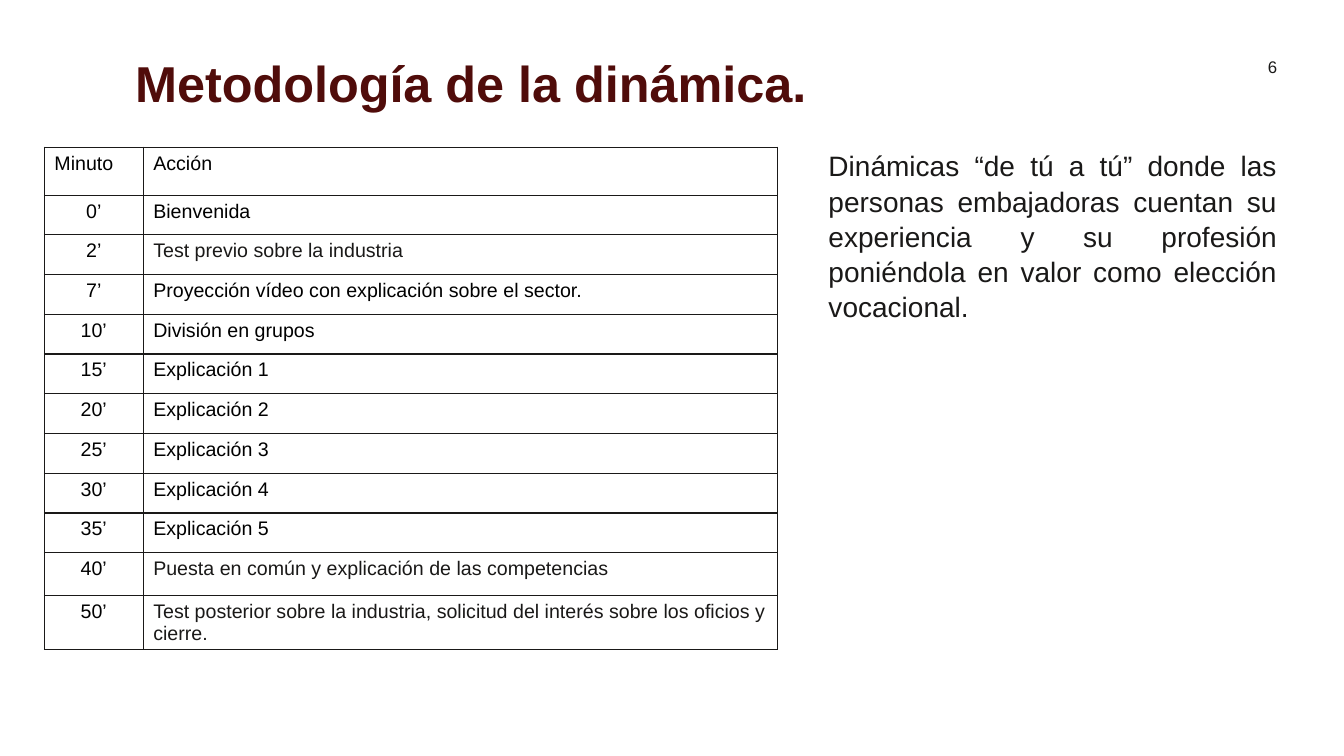
"""Build the slide with the timetable of the ambassador session."""
from lxml import etree
from pptx import Presentation
from pptx.dml.color import RGBColor
from pptx.enum.text import MSO_ANCHOR, MSO_AUTO_SIZE, PP_ALIGN
from pptx.oxml.ns import qn
from pptx.util import Pt

LEFT, CENTER, JUSTIFY = PP_ALIGN.LEFT, PP_ALIGN.CENTER, PP_ALIGN.JUSTIFY
TOP, MIDDLE = MSO_ANCHOR.TOP, MSO_ANCHOR.MIDDLE
NO_AUTOFIT = MSO_AUTO_SIZE.NONE

MAROON = RGBColor(0x50, 0x0C, 0x0A)
INK = RGBColor(0x1A, 0x19, 0x18)
BLACK = RGBColor(0, 0, 0)
FONT_NAME = "Arial"

TITLE = "Metodología de la dinámica."
PAGE_NUMBER = "6"
SUMMARY = (
    "Dinámicas “de tú a tú” donde las personas embajadoras cuentan su "
    "experiencia y su profesión poniéndola en valor como elección vocacional."
)
HEADINGS = ("Minuto", "Acción")
AGENDA = [
    ("0’", "Bienvenida", BLACK),
    ("2’", "Test previo sobre la industria", INK),
    ("7’", "Proyección vídeo con explicación sobre el sector.", BLACK),
    ("10’", "División en grupos", BLACK),
    ("15’", "Explicación 1", BLACK),
    ("20’", "Explicación 2", BLACK),
    ("25’", "Explicación 3", BLACK),
    ("30’", "Explicación 4", BLACK),
    ("35’", "Explicación 5", BLACK),
    ("40’", "Puesta en común y explicación de las competencias", INK),
    ("50’", "Test posterior sobre la industria, solicitud del interés sobre "
            "los oficios y cierre.", INK),
]

SLIDE_SIZE = (960, 540)
TITLE_BOX = (96.5, 38.2, 765.4, 46.8)
NUMBER_BOX = (897.8, 39.6, 22.3, 15.8)
SUMMARY_BOX = (591.8, 105.1, 320.4, 121)
TABLE_LEFT, TABLE_TOP = 31.7, 105.1
COLUMN_WIDTHS = (70.6, 452.9)
ROW_HEIGHTS = [34.3] + [28.4] * 9 + [30.6, 38.4]
BORDER_WIDTH = 1


def write(frame, text, size, color, align=LEFT, bold=False, spacing=1.0):
    """Put one formatted paragraph into a text frame."""
    paragraph = frame.paragraphs[0]
    paragraph.alignment = align
    paragraph.line_spacing = spacing
    paragraph.space_before = Pt(0)
    run = paragraph.add_run()
    run.text = text
    run.font.name = FONT_NAME
    run.font.size = Pt(size)
    run.font.bold = bold
    run.font.color.rgb = color
    return paragraph


def place(shape, box, margins, anchor=TOP, wrap=True):
    """Move a shape and set up its text frame."""
    shape.left, shape.top, shape.width, shape.height = map(Pt, box)
    frame = shape.text_frame
    frame.auto_size = NO_AUTOFIT
    frame.word_wrap = wrap
    frame.vertical_anchor = anchor
    frame.margin_left = frame.margin_right = Pt(margins[0])
    frame.margin_top = frame.margin_bottom = Pt(margins[1])
    return frame


def outline_cell(cell):
    """Give a cell four thin borders and no fill."""
    properties = cell._tc.get_or_add_tcPr()
    for side in ("a:lnL", "a:lnR", "a:lnT", "a:lnB"):
        line = etree.SubElement(properties, qn(side), w=str(Pt(BORDER_WIDTH)))
        fill = etree.SubElement(line, qn("a:solidFill"))
        etree.SubElement(fill, qn("a:srgbClr"), val=str(INK))
    cell.fill.background()


def add_agenda(slide):
    """Add the table of minutes and actions."""
    rows = [(*HEADINGS, BLACK)] + AGENDA
    table = slide.shapes.add_table(
        len(rows), len(COLUMN_WIDTHS), Pt(TABLE_LEFT), Pt(TABLE_TOP),
        Pt(sum(COLUMN_WIDTHS)), Pt(sum(ROW_HEIGHTS))).table
    table.first_row = table.horz_banding = False
    for column, width in zip(table.columns, COLUMN_WIDTHS):
        column.width = Pt(width)
    for index, (minute, action, color) in enumerate(rows):
        table.rows[index].height = Pt(ROW_HEIGHTS[index])
        minute_cell, action_cell = table.cell(index, 0), table.cell(index, 1)
        write(minute_cell.text_frame, minute, 14, BLACK,
              align=CENTER if index else LEFT)
        write(action_cell.text_frame, action, 14, color)
        outline_cell(minute_cell)
        outline_cell(action_cell)


def main():
    """Create the presentation and save it."""
    presentation = Presentation()
    presentation.slide_width, presentation.slide_height = map(Pt, SLIDE_SIZE)
    slide = presentation.slides.add_slide(presentation.slide_layouts[1])

    title_frame = place(slide.shapes.title, TITLE_BOX, (0, 3.6))
    write(title_frame, TITLE, 36, MAROON, bold=True, spacing=0.9)

    summary_frame = place(slide.placeholders[1], SUMMARY_BOX, (0, 0))
    summary = write(summary_frame, SUMMARY, 20, INK, align=JUSTIFY, spacing=1.05)
    properties = summary._p.get_or_add_pPr()
    properties.set("marL", "0")
    properties.set("indent", "0")
    etree.SubElement(properties, qn("a:buNone"))

    add_agenda(slide)

    number_box = slide.shapes.add_textbox(*map(Pt, NUMBER_BOX))
    number_frame = place(number_box, NUMBER_BOX, (5.8, 0), MIDDLE, wrap=False)
    write(number_frame, PAGE_NUMBER, 12, INK, align=CENTER)

    presentation.save("out.pptx")


if __name__ == "__main__":
    main()
